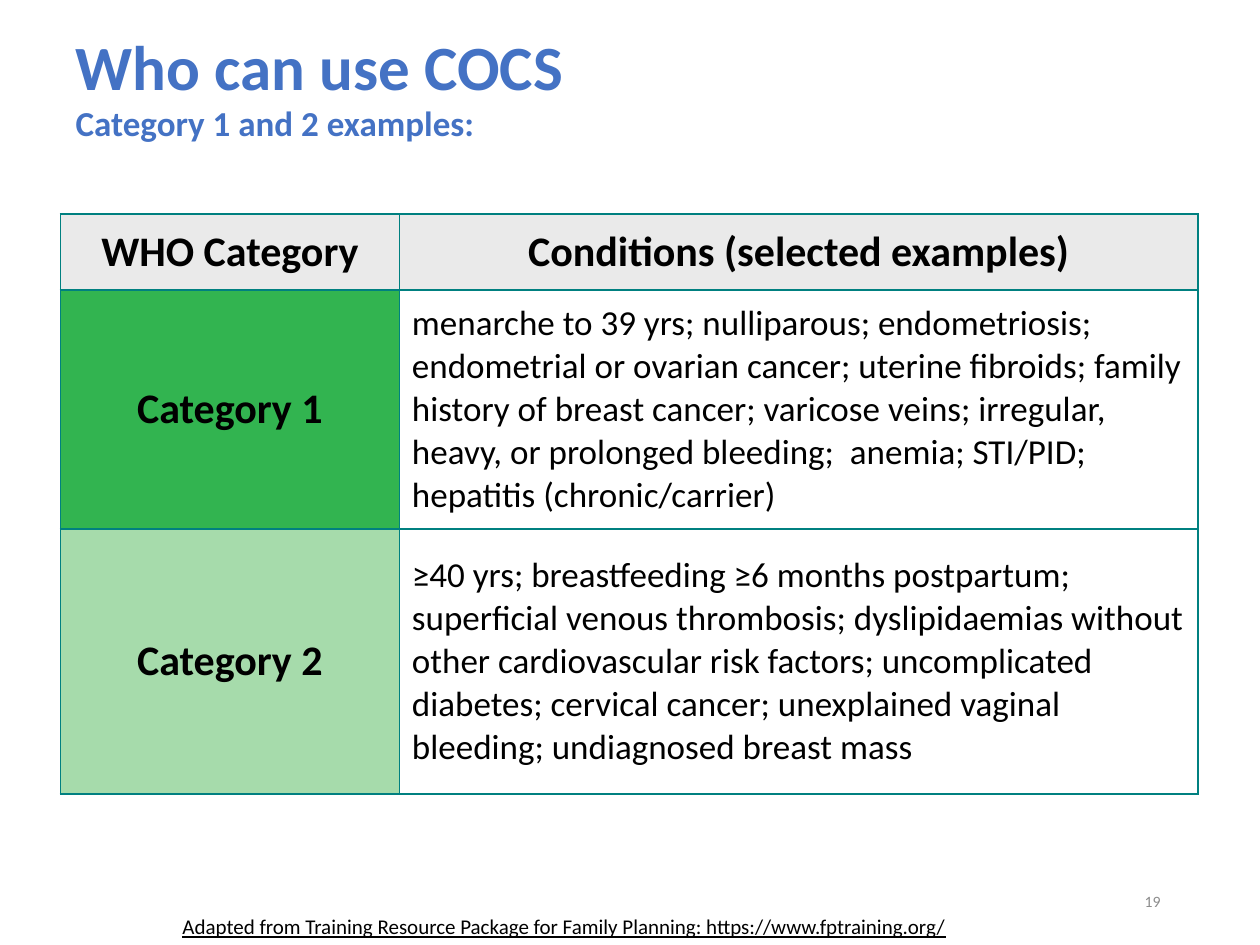
from lxml.etree import SubElement
from pptx import Presentation
from pptx.dml.color import RGBColor
from pptx.enum.text import MSO_ANCHOR, MSO_AUTO_SIZE, PP_ALIGN
from pptx.oxml.ns import qn
from pptx.util import Inches, Pt

BLUE = RGBColor(0x44, 0x72, 0xC4)
BLACK = RGBColor(0x00, 0x00, 0x00)
GRAY = RGBColor(0x8C, 0x8C, 0x8C)
TEAL = RGBColor(0x00, 0x80, 0x80)
HEADER_FILL = RGBColor(0xEA, 0xEA, 0xEA)
CATEGORY_1_FILL = RGBColor(0x32, 0xB4, 0x50)
CATEGORY_2_FILL = RGBColor(0xA6, 0xDB, 0xAB)

CATEGORY_1_CONDITIONS = (
    "menarche to 39 yrs; nulliparous; endometriosis; endometrial or ovarian cancer; "
    "uterine fibroids; family history of breast cancer; varicose veins; irregular, "
    "heavy, or prolonged bleeding;  anemia; STI/PID; hepatitis (chronic/carrier)"
)
CATEGORY_2_CONDITIONS = (
    "≥40 yrs; breastfeeding ≥6 months postpartum; superficial venous thrombosis; "
    "dyslipidaemias without other cardiovascular risk factors; uncomplicated diabetes; "
    "cervical cancer; unexplained vaginal bleeding; undiagnosed breast mass"
)


class SlideBuilder:
    font_name = "Calibri"
    column_count = 100
    row_count = 75

    def __init__(self, presentation):
        self.slide = presentation.slides.add_slide(presentation.slide_layouts[5])
        self.column = presentation.slide_width / self.column_count
        self.row = presentation.slide_height / self.row_count

    def box(self, left, top, width, height):
        return (round(left * self.column), round(top * self.row),
                round(width * self.column), round(height * self.row))

    def format(self, paragraph, size, color=BLACK, bold=False, underline=False,
               align=PP_ALIGN.LEFT, space_before=0):
        paragraph.alignment = align
        paragraph.space_before = Pt(space_before)
        for run in paragraph.runs:
            font = run.font
            font.name, font.size = self.font_name, Pt(size)
            font.bold, font.underline = bold, underline
            font.color.rgb = color

    def title(self, lines, area):
        shape = self.slide.shapes.title
        shape.left, shape.top, shape.width, shape.height = self.box(*area)
        text_frame = shape.text_frame
        text_frame.text = "\n".join(text for text, size in lines)
        text_frame.auto_size = MSO_AUTO_SIZE.NONE
        text_frame.vertical_anchor = MSO_ANCHOR.TOP
        for paragraph, (text, size) in zip(text_frame.paragraphs, lines):
            self.format(paragraph, size, BLUE, bold=True)
            paragraph.line_spacing = 0.95

    def text(self, text, area, size, anchor=MSO_ANCHOR.TOP, **style):
        text_frame = self.slide.shapes.add_textbox(*self.box(*area)).text_frame
        text_frame.word_wrap = True
        text_frame.vertical_anchor = anchor
        text_frame.text = text
        self.format(text_frame.paragraphs[0], size, **style)

    def borders(self, cell):
        properties = cell._tc.get_or_add_tcPr()
        for position, side in enumerate(("a:lnL", "a:lnR", "a:lnT", "a:lnB")):
            line = SubElement(properties, qn(side), w=str(Pt(1)))
            properties.remove(line)
            properties.insert(position, line)
            fill = SubElement(line, qn("a:solidFill"))
            SubElement(fill, qn("a:srgbClr"), val=str(TEAL))

    def cell(self, cell, text, fill=None, **style):
        cell.text = text
        cell.vertical_anchor = MSO_ANCHOR.MIDDLE
        if fill is None:
            cell.fill.background()
        else:
            cell.fill.solid()
            cell.fill.fore_color.rgb = fill
        self.format(cell.text_frame.paragraphs[0], **style)
        self.borders(cell)

    def table(self, left, top, widths, heights, rows):
        area = self.box(left, top, sum(widths), sum(heights))
        table = self.slide.shapes.add_table(len(heights), len(widths), *area).table
        table.first_row = table.horz_banding = False
        for column, width in zip(table.columns, widths):
            column.width = round(width * self.column)
        for row, height, contents in zip(table.rows, heights, rows):
            row.height = round(height * self.row)
            for cell, (text, style) in zip(row.cells, contents):
                self.cell(cell, text, **style)


def main():
    presentation = Presentation()
    presentation.slide_width, presentation.slide_height = Inches(10), Inches(7.5)
    builder = SlideBuilder(presentation)

    heading = dict(size=24, bold=True, align=PP_ALIGN.CENTER)
    header = dict(heading, fill=HEADER_FILL)
    rows = [
        [("WHO Category", header), ("Conditions (selected examples)", header)],
        [("Category 1", dict(heading, fill=CATEGORY_1_FILL)),
         (CATEGORY_1_CONDITIONS, dict(size=20))],
        [("Category 2", dict(heading, fill=CATEGORY_2_FILL, space_before=5)),
         (CATEGORY_2_CONDITIONS, dict(size=20, space_before=12))],
    ]
    builder.table(4.8, 17, (26.9, 63.4), (6, 19, 21), rows)
    builder.title([("Who can use COCS", 36), ("Category 1 and 2 examples:", 20)],
                  (5, 2.1, 90, 12.5))
    builder.text("19", (70.6, 69.5, 22.5, 4), 9, MSO_ANCHOR.MIDDLE,
                 color=GRAY, align=PP_ALIGN.RIGHT)
    builder.text("Adapted from Training Resource Package for Family Planning: "
                 "https://www.fptraining.org/", (13.5, 72, 69.4, 2.7), 12, underline=True)
    presentation.save("out.pptx")


if __name__ == "__main__":
    main()
